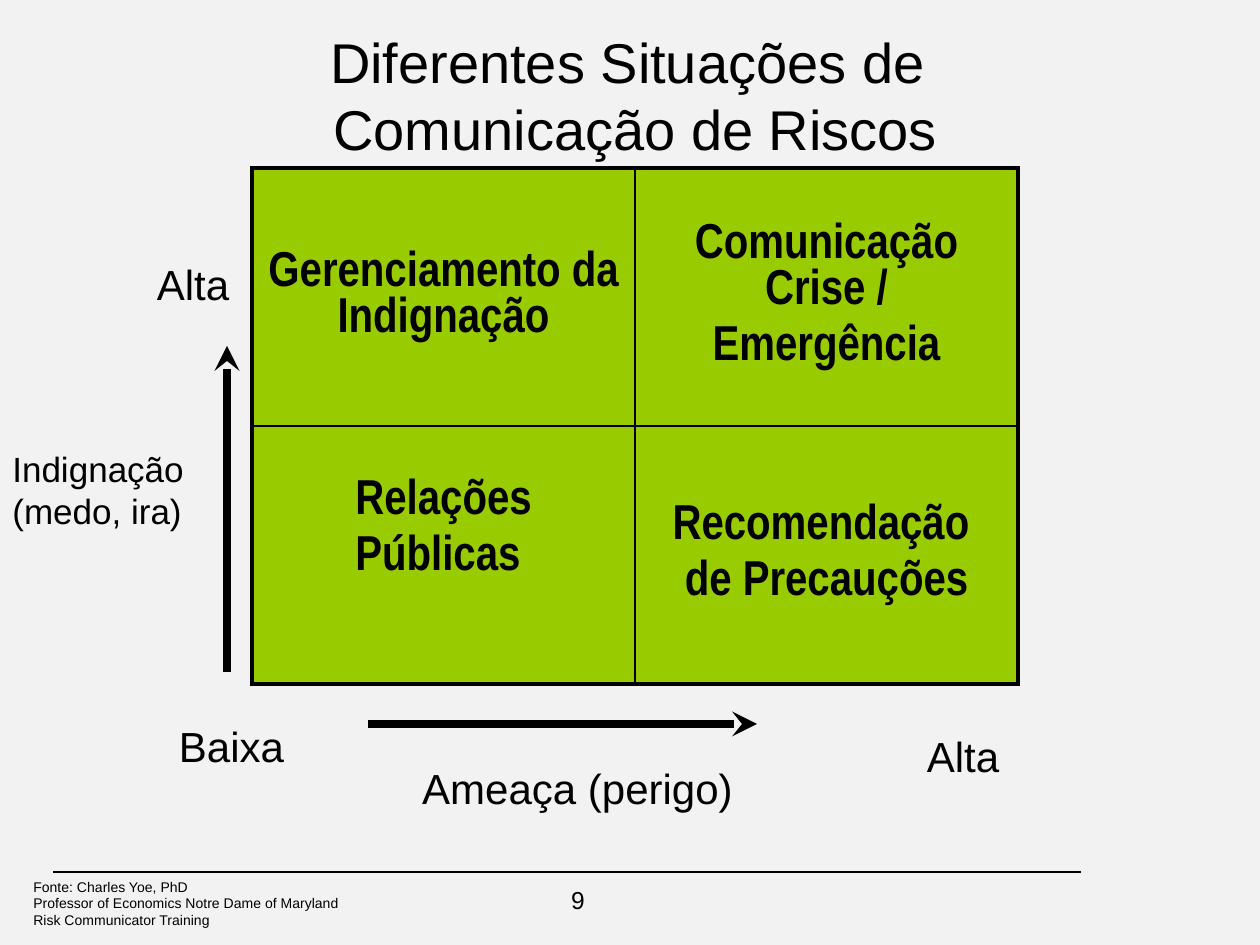
"""Build the risk communication matrix slide."""
from lxml.etree import SubElement
from pptx import Presentation
from pptx.dml.color import RGBColor
from pptx.enum.shapes import MSO_CONNECTOR as CONN
from pptx.enum.text import MSO_ANCHOR as ANCHOR, PP_ALIGN as ALIGN
from pptx.oxml.ns import qn
from pptx.util import Emu, Pt

BLACK = RGBColor(0x00, 0x00, 0x00)
GREEN = RGBColor(0x99, 0xCC, 0x00)
GREY = RGBColor(0xF2, 0xF2, 0xF2)
PX_PER_INCH = 126


def px(n):
    return Emu(round(n * 914400 / PX_PER_INCH))


class SlideBuilder:
    font = "Arial"
    cell_font = "Arial Narrow"

    def __init__(self, prs):
        self.s = prs.slides.add_slide(prs.slide_layouts[6])
        fill = self.s.background.fill
        fill.solid()
        fill.fore_color.rgb = GREY

    def set_text(self, tf, text, size, font, align, bold=False, gap=0):
        tf.text = text
        for i, p in enumerate(tf.paragraphs):
            p.alignment = align
            p.space_before = Pt(gap if i else 0)
            for r in p.runs:
                r.font.name, r.font.size, r.font.bold = font, Pt(size), bold
                r.font.color.rgb = BLACK

    def text(self, x, y, w, h, text, size, align=ALIGN.CENTER, wrap=True):
        tf = self.s.shapes.add_textbox(px(x), px(y), px(w), px(h)).text_frame
        tf.word_wrap = wrap
        self.set_text(tf, text, size, self.font, align)

    def line(self, x1, y1, x2, y2, width, arrow=False):
        sp = self.s.shapes.add_connector(CONN.STRAIGHT, px(x1), px(y1), px(x2), px(y2))
        sp.line.color.rgb = BLACK
        sp.line.width = Pt(width)
        sp_pr = sp._element.spPr
        if arrow:
            SubElement(sp_pr.find(qn("a:ln")), qn("a:tailEnd"), type="stealth")
        SubElement(sp_pr, qn("a:effectLst"))

    def border(self, cell, side, width):
        tc_pr = cell._tc.get_or_add_tcPr()
        ln = SubElement(tc_pr, qn(f"a:ln{side}"), w=str(Pt(width)))
        fill = SubElement(ln, qn("a:solidFill"))
        SubElement(fill, qn("a:srgbClr"), val=str(BLACK))

    def matrix(self, x, y, col_w, row_h, rows, size, outer=2.25, inner=1):
        n_rows, n_cols = len(rows), len(rows[0])
        table = self.s.shapes.add_table(
            n_rows, n_cols, px(x), px(y), px(col_w * n_cols), px(row_h * n_rows)).table
        table.first_row = table.horz_banding = False
        for i, row in enumerate(rows):
            for j, (text, lift) in enumerate(row):
                cell = table.cell(i, j)
                edges = {"L": j == 0, "R": j == n_cols - 1,
                         "T": i == 0, "B": i == n_rows - 1}
                for side, is_outer in edges.items():
                    self.border(cell, side, outer if is_outer else inner)
                cell.fill.solid()
                cell.fill.fore_color.rgb = GREEN
                cell.vertical_anchor = ANCHOR.MIDDLE
                cell.margin_bottom = px(6 + lift)
                self.set_text(cell.text_frame, text, size, self.cell_font,
                              ALIGN.CENTER, bold=True, gap=size * 0.2)


def main():
    prs = Presentation()
    prs.slide_width, prs.slide_height = px(1260), px(945)
    b = SlideBuilder(prs)
    b.line(1081, 872, 53, 872, 0.75)
    b.text(431, 879, 294, 66, "9", 14)
    b.text(42, 21, 1187, 92, "Diferentes Situações de \nComunicação de Riscos", 32)
    b.text(408, 756, 339, 63, "Ameaça (perigo)", 24, wrap=False)
    b.text(144, 252, 98, 63, "Alta", 24, wrap=False)
    b.text(158, 714, 147, 63, "Baixa", 24)
    b.text(914, 724, 98, 63, "Alta", 24, wrap=False)
    b.line(368, 724, 757, 724, 4.75, arrow=True)
    b.line(227, 672, 227, 346, 4.75, arrow=True)
    b.matrix(252, 168, 383, 258, [
        [("Gerenciamento da Indignação", 0), ("Comunicação Crise /\nEmergência", 0)],
        [("Relações\nPúblicas ", 50), ("Recomendação \nde Precauções", 0)],
    ], 28)
    b.text(0, 441, 226, 97, "Indignação\n(medo, ira)", 20, ALIGN.LEFT)
    b.text(21, 872, 441, 81, "Fonte: Charles Yoe, PhD\n"
           "Professor of Economics Notre Dame of Maryland\n"
           "Risk Communicator Training", 8, ALIGN.LEFT)
    prs.save("out.pptx")


if __name__ == "__main__":
    main()
